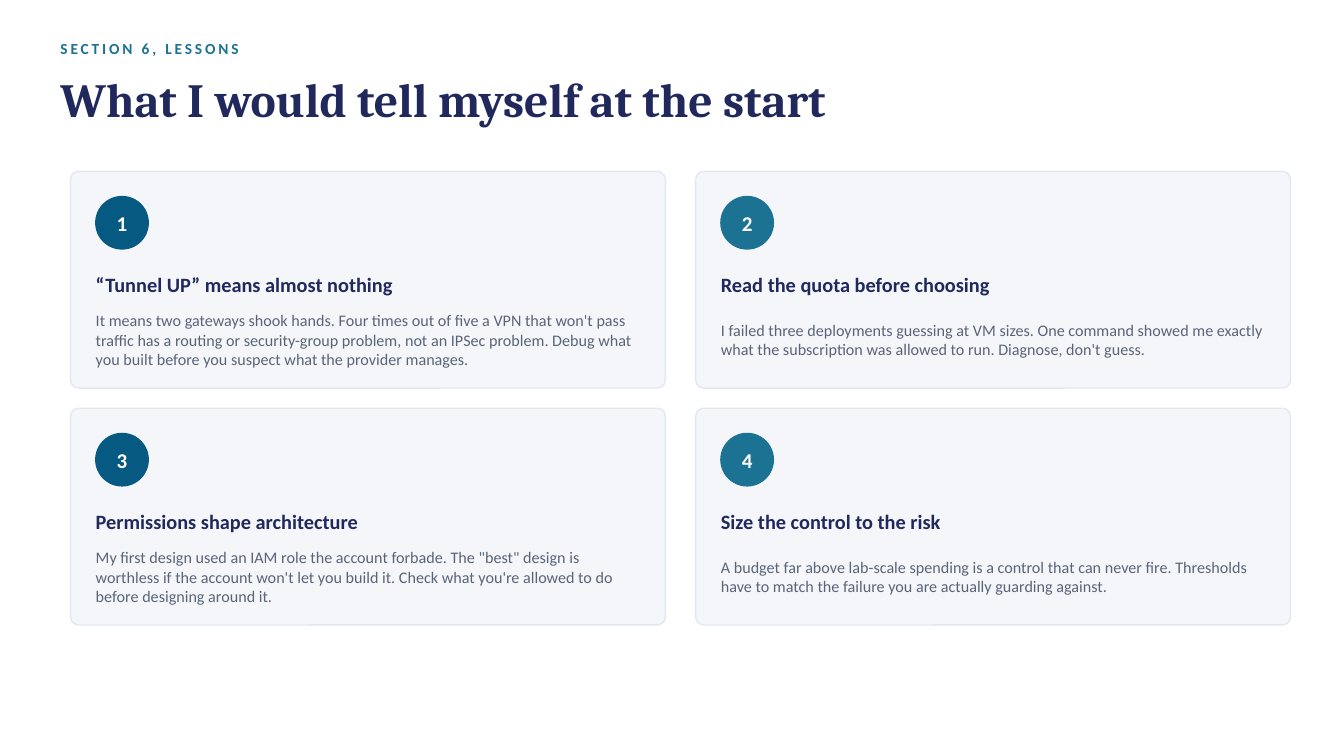
from dataclasses import dataclass

from pptx import Presentation
from pptx.dml.color import RGBColor
from pptx.enum.shapes import MSO_SHAPE
from pptx.enum.text import MSO_ANCHOR, PP_ALIGN
from pptx.shapes.autoshape import Shape
from pptx.slide import Slide
from pptx.util import Emu, Pt

ROUNDED = MSO_SHAPE.ROUNDED_RECTANGLE
OVAL = MSO_SHAPE.OVAL
MIDDLE = MSO_ANCHOR.MIDDLE
LEFT, CENTER = PP_ALIGN.LEFT, PP_ALIGN.CENTER

EMU_PER_PX = 9144  # 100 px to the inch
COLORS = {
    "navy": "21295C",
    "teal": "1C7293",
    "deep_blue": "065A82",
    "slate": "5A6478",
    "card": "F4F6FA",
    "card_edge": "E2E7F0",
    "white": "FFFFFF",
}
HEADING_FONT, BODY_FONT = "Cambria", "Calibri"

CARD_WIDTH, CARD_HEIGHT = 590, 215
GRID_LEFT, GRID_TOP = 70, 170
COLUMN_STEP, ROW_STEP = CARD_WIDTH + 30, CARD_HEIGHT + 20
CARD_PADDING, BADGE_SIZE, TEXT_WIDTH = 25, 52, 540
BADGE_COLORS = ("deep_blue", "teal")  # one per column


@dataclass(frozen=True)
class Box:
    left: int
    top: int
    width: int
    height: int

    def emu(self) -> list[Emu]:
        return [Emu(px * EMU_PER_PX)
                for px in (self.left, self.top, self.width, self.height)]


@dataclass(frozen=True)
class TextStyle:
    size: float
    color: str
    bold: bool = True
    font: str = BODY_FONT
    align: PP_ALIGN = LEFT
    spacing: int = 0  # hundredths of a point


@dataclass(frozen=True)
class Lesson:
    heading: str
    advice: str


SECTION_STYLE = TextStyle(11, "teal", spacing=200)
TITLE_STYLE = TextStyle(34, "navy", font=HEADING_FONT)
BADGE_STYLE = TextStyle(15, "white", align=CENTER)
HEADING_STYLE = TextStyle(14.5, "navy")
ADVICE_STYLE = TextStyle(11.5, "slate", bold=False)

LESSONS = [
    Lesson("“Tunnel UP” means almost nothing",
           "It means two gateways shook hands. Four times out of five a VPN that "
           "won't pass traffic has a routing or security-group problem, not an IPSec "
           "problem. Debug what you built before you suspect what the provider manages."),
    Lesson("Read the quota before choosing",
           "I failed three deployments guessing at VM sizes. One command showed me "
           "exactly what the subscription was allowed to run. Diagnose, don't guess."),
    Lesson("Permissions shape architecture",
           "My first design used an IAM role the account forbade. The \"best\" design "
           "is worthless if the account won't let you build it. Check what you're "
           "allowed to do before designing around it."),
    Lesson("Size the control to the risk",
           "A budget far above lab-scale spending is a control that can never fire. "
           "Thresholds have to match the failure you are actually guarding against."),
]


def rgb(color: str) -> RGBColor:
    return RGBColor.from_string(COLORS[color])


def write(shape: Shape, text: str, style: TextStyle) -> None:
    """Fill a shape with one vertically centred paragraph and no margins."""
    frame = shape.text_frame
    frame.word_wrap = True
    frame.vertical_anchor = MIDDLE
    frame.margin_left = frame.margin_top = 0
    frame.margin_right = frame.margin_bottom = 0
    frame.text = text
    paragraph = frame.paragraphs[0]
    paragraph.alignment = style.align
    run = paragraph.runs[0]
    run.font.name = style.font
    run.font.size = Pt(style.size)
    run.font.bold = style.bold
    run.font.color.rgb = rgb(style.color)
    if style.spacing:
        run._r.get_or_add_rPr().set("spc", str(style.spacing))


def add_text(slide: Slide, box: Box, text: str, style: TextStyle) -> None:
    write(slide.shapes.add_textbox(*box.emu()), text, style)


def add_panel(slide: Slide, kind: MSO_SHAPE, box: Box, fill: str, line: str) -> Shape:
    panel = slide.shapes.add_shape(kind, *box.emu())
    panel.shadow.inherit = False
    panel.fill.solid()
    panel.fill.fore_color.rgb = rgb(fill)
    panel.line.color.rgb = rgb(line)
    panel.line.width = Pt(1)
    return panel


def add_lesson(slide: Slide, index: int, lesson: Lesson) -> None:
    row, column = divmod(index, 2)
    left = GRID_LEFT + column * COLUMN_STEP
    top = GRID_TOP + row * ROW_STEP
    inner_left = left + CARD_PADDING

    card = add_panel(slide, ROUNDED, Box(left, top, CARD_WIDTH, CARD_HEIGHT),
                     "card", "card_edge")
    card.adjustments[0] = 0.037

    badge_box = Box(inner_left, top + CARD_PADDING, BADGE_SIZE, BADGE_SIZE)
    badge_color = BADGE_COLORS[column]
    badge = add_panel(slide, OVAL, badge_box, badge_color, badge_color)
    write(badge, str(index + 1), BADGE_STYLE)

    add_text(slide, Box(inner_left, top + 92, TEXT_WIDTH, 40),
             lesson.heading, HEADING_STYLE)
    add_text(slide, Box(inner_left, top + 132, TEXT_WIDTH, 70),
             lesson.advice, ADVICE_STYLE)


def main() -> None:
    deck = Presentation()
    deck.slide_width = Emu(1333 * EMU_PER_PX)
    deck.slide_height = Emu(750 * EMU_PER_PX)
    slide = deck.slides.add_slide(deck.slide_layouts[6])

    add_text(slide, Box(60, 34, 1210, 28), "SECTION 6, LESSONS", SECTION_STYLE)
    add_text(slide, Box(60, 62, 1210, 72),
             "What I would tell myself at the start", TITLE_STYLE)
    for index, lesson in enumerate(LESSONS):
        add_lesson(slide, index, lesson)

    deck.save("out.pptx")


if __name__ == "__main__":
    main()
